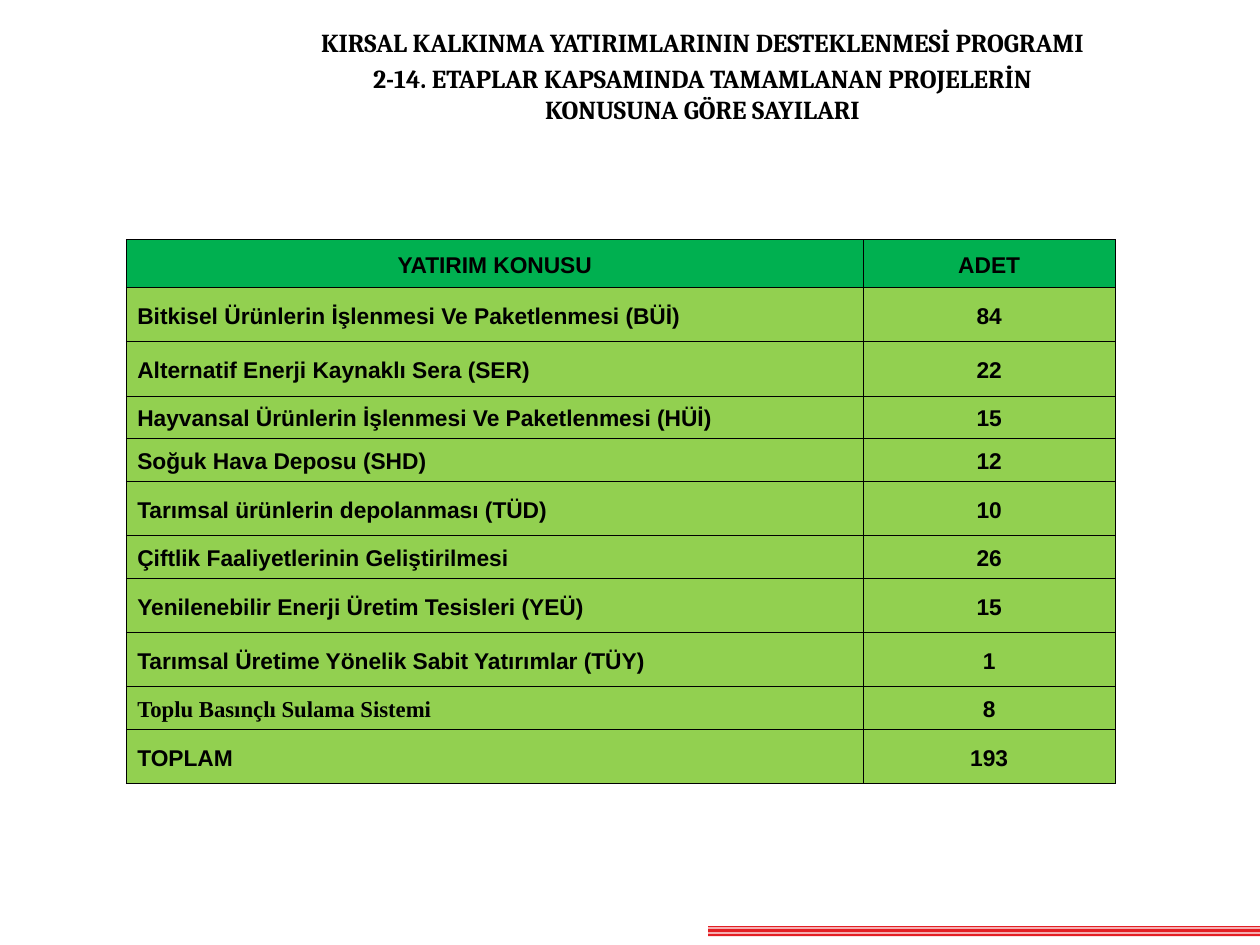
import pptx
import pptx.util
import pptx.dml.color
import pptx.enum.text
import pptx.oxml
import pptx.oxml.ns

Inches, Pt = pptx.util.Inches, pptx.util.Pt
ALIGN, ANCHOR = pptx.enum.text.PP_ALIGN, pptx.enum.text.MSO_ANCHOR

COLORS = {"ink": "000000", "head": "00B050", "row": "92D050", "stripe": "E31F24"}
TITLE = [
    "KIRSAL KALKINMA YATIRIMLARININ DESTEKLENMESİ PROGRAMI",
    "2-14. ETAPLAR KAPSAMINDA TAMAMLANAN PROJELERİN",
    "KONUSUNA GÖRE SAYILARI",
]
TALL, LOW = 0.43, 0.34
# topic, count, row height
ROWS = [
    ("YATIRIM KONUSU", "ADET", 0.38),
    ("Bitkisel Ürünlerin İşlenmesi Ve Paketlenmesi (BÜİ)", "84", TALL),
    ("Alternatif Enerji Kaynaklı Sera (SER)", "22", TALL),
    ("Hayvansal Ürünlerin İşlenmesi Ve Paketlenmesi (HÜİ)", "15", LOW),
    ("Soğuk Hava Deposu (SHD)", "12", LOW),
    ("Tarımsal ürünlerin depolanması (TÜD)", "10", TALL),
    ("Çiftlik Faaliyetlerinin Geliştirilmesi", "26", LOW),
    ("Yenilenebilir Enerji Üretim Tesisleri (YEÜ)", "15", TALL),
    ("Tarımsal Üretime Yönelik Sabit Yatırımlar (TÜY)", "1", TALL),
    ("Toplu Basınçlı Sulama Sistemi", "8", LOW),
    ("TOPLAM", "193", TALL),
]
SERIF_ROW = 9
WIDTHS = (5.85, 2)


def rgb(key):
    return pptx.dml.color.RGBColor.from_string(COLORS[key])


def apply(obj, form):
    for name, value in form.items():
        setattr(obj, name, value)


def style(par, face, size, **form):
    apply(par, form)
    apply(par.font, {"name": face, "size": Pt(size), "bold": True})
    par.font.color.rgb = rgb("ink")


def add_title(slide, left, top, width, height):
    title = slide.shapes.title
    apply(title, {"left": Inches(left), "top": Inches(top),
                  "width": Inches(width), "height": Inches(height)})
    frame = title.text_frame
    apply(frame, {"margin_left": 0, "margin_top": 0, "margin_right": 0,
                  "margin_bottom": 0, "word_wrap": True,
                  "vertical_anchor": ANCHOR.BOTTOM,
                  "auto_size": pptx.enum.text.MSO_AUTO_SIZE.NONE})
    frame.text = "\n".join(TITLE)
    for par in frame.paragraphs:
        style(par, "Cambria", 14.8, alignment=ALIGN.CENTER)
    frame.paragraphs[0].space_after = Pt(3)


def add_border(cell):
    """Draw a hairline on all four sides; must run before the fill is set."""
    props = cell._tc.get_or_add_tcPr()
    for side in "LRTB":
        props.append(pptx.oxml.parse_xml(
            f'<a:ln{side} {pptx.oxml.ns.nsdecls("a")} w="{Pt(0.11)}"><a:solidFill>'
            f'<a:srgbClr val="{COLORS["ink"]}"/></a:solidFill></a:ln{side}>'))


def fill_cell(cell, text, head, face, align):
    add_border(cell)
    cell.fill.solid()
    cell.fill.fore_color.rgb = rgb("head" if head else "row")
    apply(cell, {"margin_left": Inches(0.09), "margin_right": Inches(0.09),
                 "margin_top": Inches(0.12 if head else 0.11),
                 "margin_bottom": Inches(0.05),
                 "vertical_anchor": ANCHOR.MIDDLE})
    cell.text = text
    style(cell.text_frame.paragraphs[0], face, 13, alignment=align, line_spacing=0.81)


def add_counts(slide, left, top):
    high = sum(row[-1] for row in ROWS)
    table = slide.shapes.add_table(
        len(ROWS), len(WIDTHS), Inches(left), Inches(top),
        Inches(sum(WIDTHS)), Inches(high)).table
    for col, width in zip(table.columns, WIDTHS):
        col.width = Inches(width)
    for i, (topic, count, height) in enumerate(ROWS):
        table.rows[i].height = Inches(height)
        head = i == 0
        face = "Times New Roman" if i == SERIF_ROW else "Arial"
        fill_cell(table.cell(i, 0), topic, head, face,
                  ALIGN.CENTER if head else ALIGN.LEFT)
        fill_cell(table.cell(i, 1), count, head, "Arial", ALIGN.CENTER)


def add_stripes(slide, left, top, width):
    """Draw three bars of unlike height as one outline."""
    x1, x2 = Inches(left), Inches(left + width)
    form = slide.shapes.build_freeform(x1, Inches(top))
    for drop, height in ((0, 0.01), (0.02, 0.03), (0.06, 0.02)):
        y1, y2 = Inches(top + drop), Inches(top + drop + height)
        form.move_to(x1, y1)
        form.add_line_segments([(x2, y1), (x2, y2), (x1, y2)], close=True)
    shape = form.convert_to_shape()
    shape.shadow.inherit = False
    shape.fill.solid()
    shape.fill.fore_color.rgb = rgb("stripe")
    shape.line.fill.background()


def main():
    deck = pptx.Presentation()
    apply(deck, {"slide_width": Inches(10), "slide_height": Inches(7.5)})
    slide = deck.slides.add_slide(deck.slide_layouts[5])
    add_stripes(slide, 5.62, 7.35, 4.38)
    add_title(slide, 1.15, 0, 8.85, 0.99)
    add_counts(slide, 1, 1.9)
    deck.save("out.pptx")


if __name__ == "__main__":
    main()
